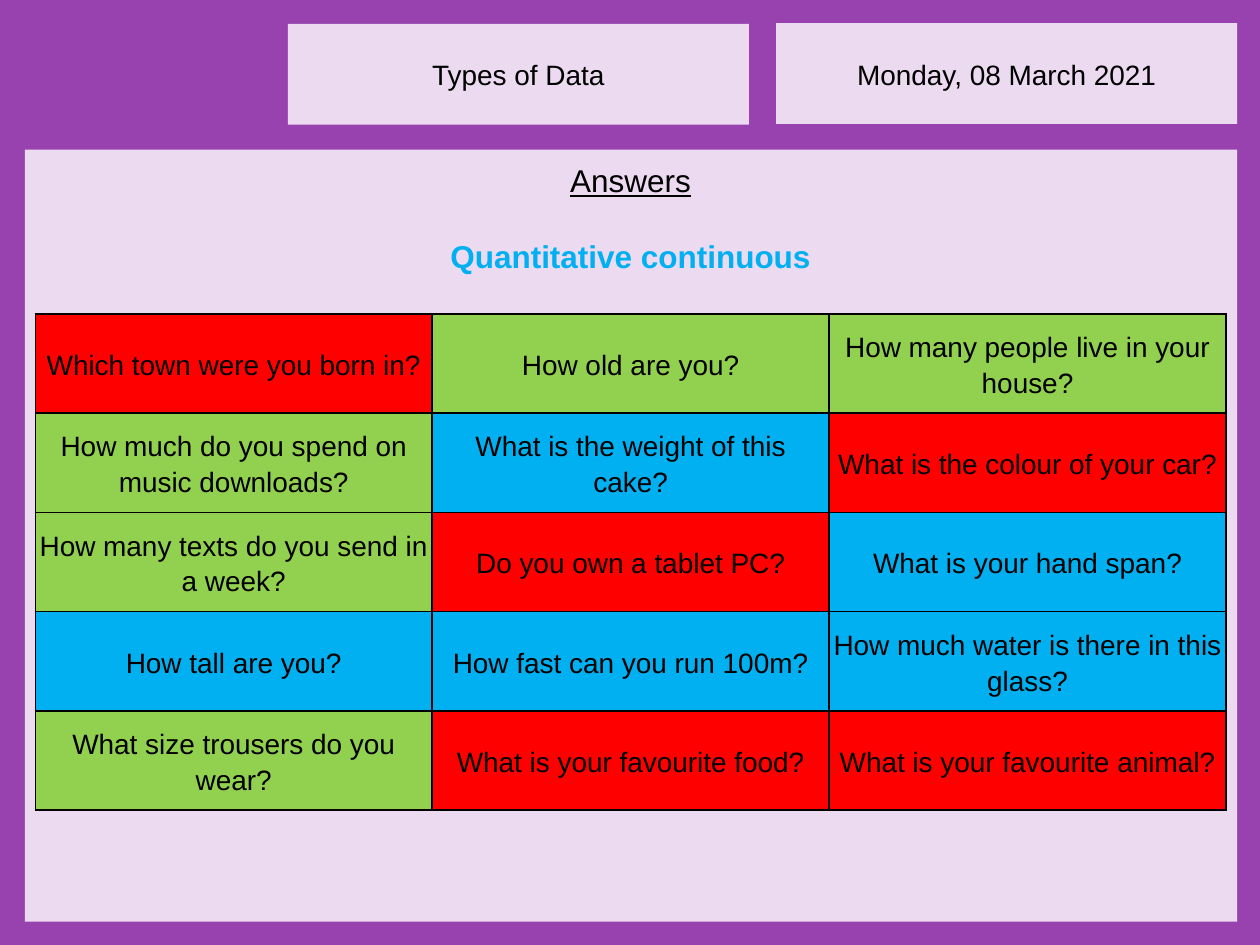
from dataclasses import dataclass

from lxml import etree
from pptx import Presentation
from pptx.dml.color import RGBColor
from pptx.enum.shapes import MSO_SHAPE
from pptx.enum.text import MSO_ANCHOR, PP_ALIGN
from pptx.oxml.ns import qn
from pptx.util import Pt

RECT = MSO_SHAPE.RECTANGLE
CENTER = PP_ALIGN.CENTER
MIDDLE = MSO_ANCHOR.MIDDLE


@dataclass(frozen=True)
class Theme:
    font: str = "Arial"
    frame: str = "9842B0"
    panel: str = "ECDAF1"
    ink: str = "000000"
    word: str = "FF0000"
    count: str = "92D050"
    scale: str = "00B0F0"
    body: int = 16
    head: int = 18


THEME = Theme()
WORD, COUNT, SCALE = THEME.word, THEME.count, THEME.scale

# Each question with the colour of its data type
ROWS = [
    [("Which town were you born in?", WORD),
     ("How old are you?", COUNT),
     ("How many people live in your house?", COUNT)],
    [("How much do you spend on music downloads?", COUNT),
     ("What is the weight of this cake?", SCALE),
     ("What is the colour of your car?", WORD)],
    [("How many texts do you send in a week?", COUNT),
     ("Do you own a tablet PC?", WORD),
     ("What is your hand span?", SCALE)],
    [("How tall are you?", SCALE),
     ("How fast can you run 100m?", SCALE),
     ("How much water is there in this glass?", SCALE)],
    [("What size trousers do you wear?", COUNT),
     ("What is your favourite food?", WORD),
     ("What is your favourite animal?", WORD)],
]


def add_rect(slide, x, y, w, h, color):
    shape = slide.shapes.add_shape(RECT, Pt(x), Pt(y), Pt(w), Pt(h))
    shape.shadow.inherit = False
    shape.fill.solid()
    shape.fill.fore_color.rgb = RGBColor.from_string(color)
    shape.line.fill.background()


def add_run(para, text, size, color=THEME.ink, bold=False, under=False):
    para.alignment = CENTER
    run = para.add_run()
    run.text = text
    font = run.font
    font.name = THEME.font
    font.size = Pt(size)
    font.bold = bold
    font.underline = under
    font.color.rgb = RGBColor.from_string(color)


def add_box(slide, x, y, w, h):
    frame = slide.shapes.add_textbox(Pt(x), Pt(y), Pt(w), Pt(h)).text_frame
    frame.word_wrap = True
    return frame


def add_label(slide, x, y, text):
    add_rect(slide, x, y, 263.5, 57.6, THEME.panel)
    frame = add_box(slide, x, 29.5, 263.5, 26.6)
    add_run(frame.paragraphs[0], text, THEME.body)


def add_edges(cell):
    props = cell._tc.get_or_add_tcPr()
    for side in ("a:lnL", "a:lnR", "a:lnT", "a:lnB"):
        line = etree.SubElement(props, qn(side), w=str(Pt(1)))
        fill = etree.SubElement(line, qn("a:solidFill"))
        etree.SubElement(fill, qn("a:srgbClr"), val=THEME.ink)


def fill_cell(cell, text, color):
    add_edges(cell)
    cell.fill.solid()
    cell.fill.fore_color.rgb = RGBColor.from_string(color)
    cell.vertical_anchor = MIDDLE
    cell.margin_left = cell.margin_right = Pt(2.16)
    cell.margin_top = cell.margin_bottom = Pt(0.72)
    para = cell.text_frame.paragraphs[0]
    para.line_spacing = 1.15
    para.space_after = Pt(10)
    add_run(para, text, THEME.body)


def add_grid(slide, x, y, w, h):
    table = slide.shapes.add_table(
        len(ROWS), len(ROWS[0]), Pt(x), Pt(y), Pt(w), Pt(h)).table
    table.first_row = table.horz_banding = False
    for i, row in enumerate(ROWS):
        for j, (text, color) in enumerate(row):
            fill_cell(table.cell(i, j), text, color)


def add_title(slide):
    frame = add_box(slide, 20.16, 88.56, 680.4, 72.7)
    add_run(frame.paragraphs[0], "Answers", THEME.head, under=True)
    para = frame.add_paragraph()
    para.space_before = Pt(22)
    add_run(para, "Quantitative continuous", THEME.head, SCALE, bold=True)


def main():
    deck = Presentation()
    deck.slide_width, deck.slide_height = Pt(720), Pt(540)
    slide = deck.slides.add_slide(deck.slide_layouts[6])

    # Frame, header labels and main panel
    add_rect(slide, 0, 0, 720, 540, THEME.frame)
    add_label(slide, 443.5, 13.3, "Monday, 08 March 2021")
    add_label(slide, 164.5, 13.6, "Types of Data")
    add_rect(slide, 14.2, 85.5, 692.7, 441.2, THEME.panel)

    # Sorted questions and heading
    add_grid(slide, 20.16, 179.4, 680.4, 283.5)
    add_title(slide)

    deck.save("out.pptx")


if __name__ == "__main__":
    main()
